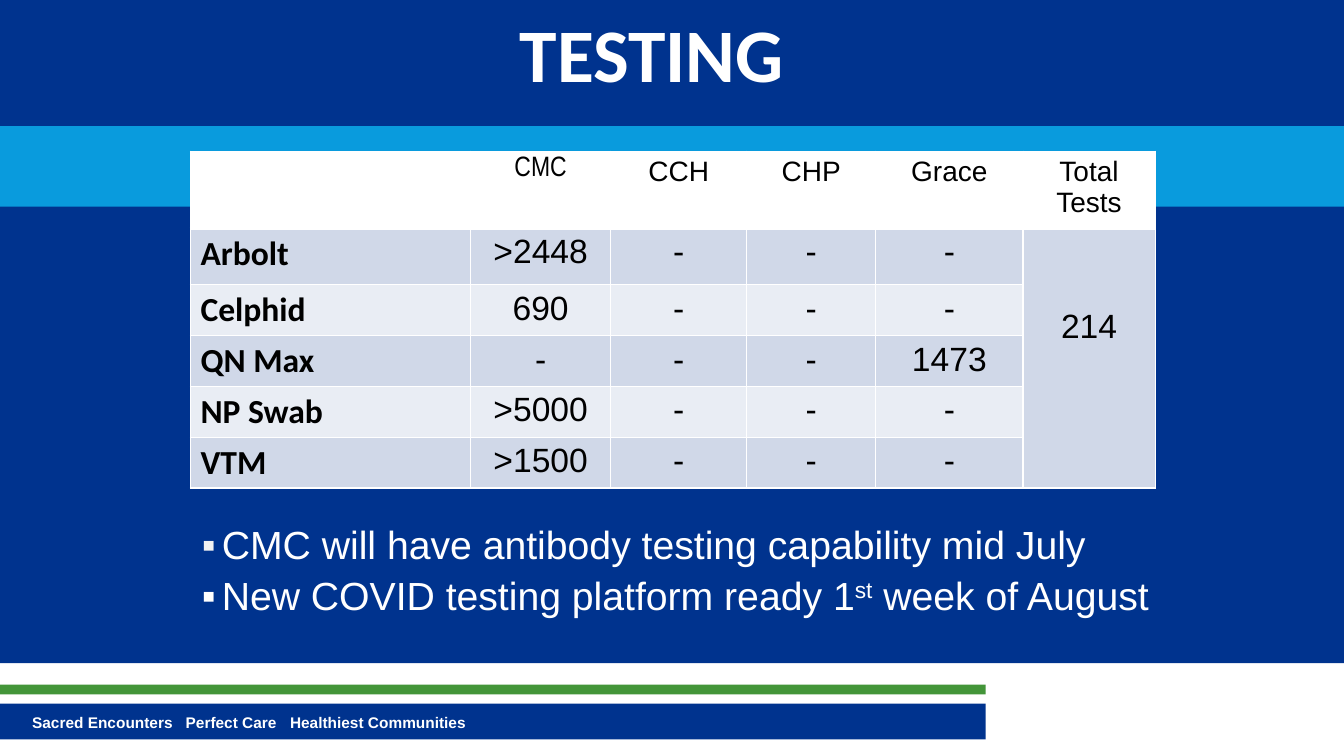
from lxml.etree import SubElement
from pptx import Presentation
from pptx.dml.color import RGBColor
from pptx.enum.shapes import MSO_SHAPE
from pptx.enum.text import PP_ALIGN
from pptx.oxml.ns import qn
from pptx.util import Cm, Pt

NAVY, SKY, GREEN = "00338E", "099BDD", "439539"
WHITE, BLACK = "FFFFFF", "000000"
BANDS = ["D0D8E8", "E9EDF4"]
WIDTHS = [7.06, 3.53, 3.43, 3.25, 3.71, 3.33]
HEIGHTS = [1.85, 1.42, 1.28, 1.28, 1.28, 1.28]
HEAD = ["", "CMC", "CCH", "CHP", "Grace", "Total Tests"]
ROWS = [
    ["Arbolt", ">2448", "-", "-", "-"],
    ["Celphid", "690", "-", "-", "-"],
    ["QN Max", "-", "-", "-", "1473"],
    ["NP Swab", ">5000", "-", "-", "-"],
    ["VTM", ">1500", "-", "-", "-"],
]
TOTAL = "214"
MOTTO = ["Sacred Encounters", "Perfect Care", "Healthiest Communities"]
STOPS = [3.87, 6.5]
NOTES = [
    ("F2F2F2", [("CMC will have antibody testing capability mid July", 0)]),
    (WHITE, [("New COVID testing platform ready 1", 0), ("st", 30),
             (" week of August", 0)]),
]


def color(code):
    return RGBColor.from_string(code)


def add_run(para, text, size, code=WHITE, face="Arial", bold=False):
    run = para.add_run()
    run.text = text
    font = run.font
    font.size, font.name, font.bold = Pt(size), face, bold
    font.color.rgb = color(code)
    return run


def add_bar(slide, box, code):
    bar = slide.shapes.add_shape(MSO_SHAPE.RECTANGLE, *map(Cm, box))
    bar.shadow.inherit = False
    bar.fill.solid()
    bar.fill.fore_color.rgb = color(code)
    bar.line.fill.background()


def add_text(slide, box):
    frame = slide.shapes.add_textbox(*map(Cm, box)).text_frame
    frame.word_wrap = True
    return frame


def add_title(slide, box):
    para = add_text(slide, box).paragraphs[0]
    para.alignment = PP_ALIGN.CENTER
    add_run(para, "TESTING", 54, face="Calibri", bold=True)


def add_foot(slide, box):
    """Green rule over a navy strip that holds the motto."""
    left, top, width, height = box
    add_bar(slide, (left, top, width, 0.25), GREEN)
    add_bar(slide, (left, top + 0.48, width, height - 0.48), NAVY)
    para = add_text(slide, (left + 0.64, top + 0.6, 21.16, 0.74)).paragraphs[0]
    tabs = SubElement(para._p.get_or_add_pPr(), qn("a:tabLst"))
    for stop in STOPS:
        SubElement(tabs, qn("a:tab"), pos=str(Cm(stop)), algn="l")
    add_run(para, "\t".join(MOTTO), 11, bold=True)


def style_cell(cell, fill, base=1):
    """Set white borders, with the given bottom width, and a fill."""
    props = cell._tc.get_or_add_tcPr()
    for side, width in zip("LRTB", (1, 1, 1, base)):
        line = SubElement(props, qn("a:ln" + side), w=str(Pt(width)))
        SubElement(SubElement(line, qn("a:solidFill")),
                   qn("a:srgbClr"), val=WHITE)
    cell.fill.solid()
    cell.fill.fore_color.rgb = color(fill)


def fill_cell(cell, text, size, face="Arial", label=False):
    para = cell.text_frame.paragraphs[0]
    if not label:
        para.alignment = PP_ALIGN.CENTER
    if text:
        add_run(para, text, size, BLACK, face, label)


def add_grid(slide, left, top):
    grid = slide.shapes.add_table(
        len(HEIGHTS), len(WIDTHS), Cm(left), Cm(top),
        Cm(sum(WIDTHS)), Cm(sum(HEIGHTS))).table
    for col, width in zip(grid.columns, WIDTHS):
        col.width = Cm(width)
    for row, height in zip(grid.rows, HEIGHTS):
        row.height = Cm(height)
    for c, text in enumerate(HEAD):
        cell = grid.cell(0, c)
        style_cell(cell, WHITE, 3)
        fill_cell(cell, text, 20, "Arial Narrow" if c == 1 else "Arial")
    for r, row in enumerate(ROWS):
        for c, text in enumerate(row):
            cell = grid.cell(r + 1, c)
            style_cell(cell, BANDS[r % 2])
            fill_cell(cell, text, 24, "Arial" if c else "Calibri", c == 0)
        style_cell(grid.cell(r + 1, len(row)), BANDS[0])
    total = grid.cell(1, len(HEAD) - 1)
    total.merge(grid.cell(len(ROWS), len(HEAD) - 1))
    total.margin_top = Cm(2)
    fill_cell(total, TOTAL, 24)


def add_notes(slide, box):
    frame = add_text(slide, box)
    for i, (tint, parts) in enumerate(NOTES):
        para = frame.add_paragraph() if i else frame.paragraphs[0]
        para.line_spacing = 0.9
        para.space_before, para.space_after = Pt(2 if i else 0), Pt(4)
        props = para._p.get_or_add_pPr()
        props.set("marL", str(Cm(1.78)))
        props.set("indent", str(Cm(-0.5)))
        mark = SubElement(props, qn("a:buClr"))
        SubElement(mark, qn("a:srgbClr"), val=tint)
        SubElement(props, qn("a:buFont"), typeface="Arial")
        SubElement(props, qn("a:buChar"), char="▪")
        for text, rise in parts:
            run = add_run(para, text, 28)
            if rise:
                run.font._element.set("baseline", str(rise * 1000))


def main():
    deck = Presentation()
    deck.slide_width, deck.slide_height = Cm(33.87), Cm(19.05)
    slide = deck.slides.add_slide(deck.slide_layouts[6])
    add_bar(slide, (0, 0, 33.87, 16.71), NAVY)
    add_foot(slide, (-0.08, 17.25, 24.92, 1.38))
    add_title(slide, (2.84, 0.05, 27.18, 2.6))
    add_bar(slide, (0, 3.18, 33.87, 2.03), SKY)
    add_grid(slide, 4.8, 3.81)
    add_notes(slide, (3.56, 13.13, 29.92, 3.5))
    deck.save("out.pptx")


if __name__ == "__main__":
    main()
